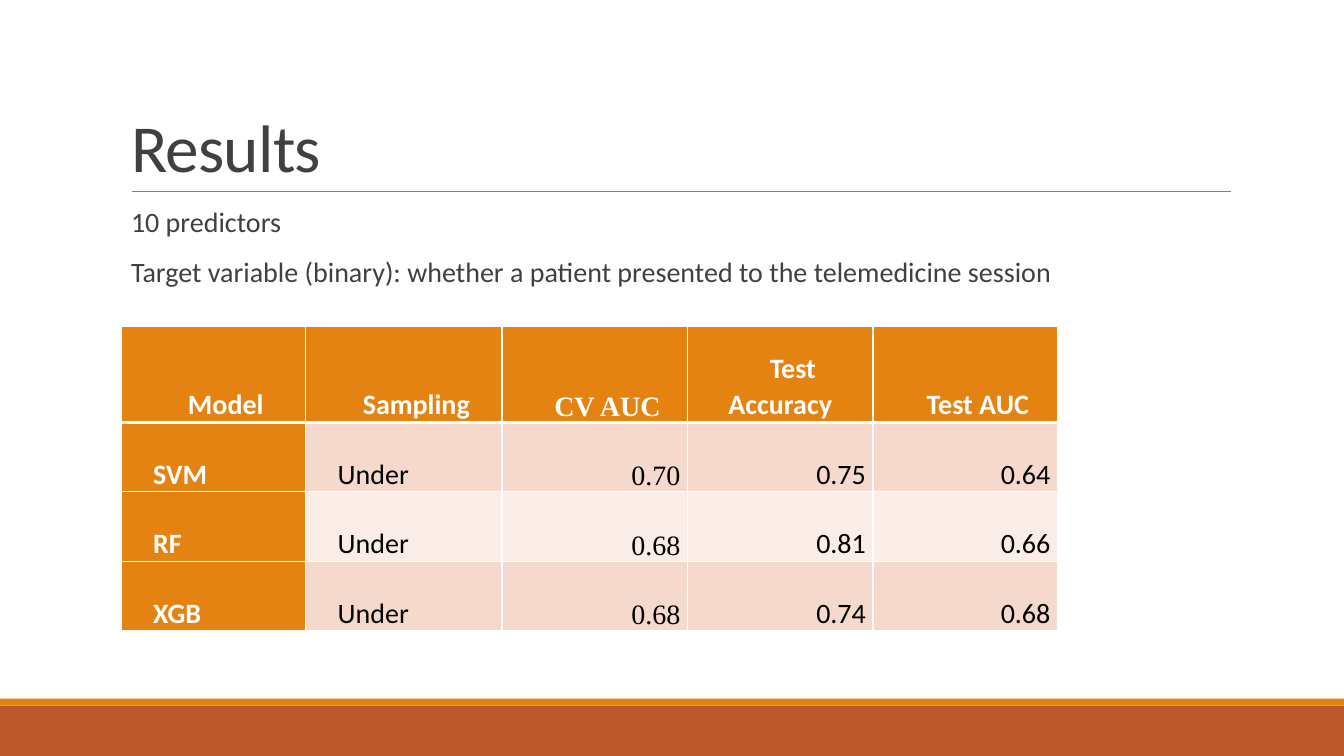
from dataclasses import dataclass

from lxml import etree
from pptx import Presentation
from pptx.dml.color import RGBColor
from pptx.enum.shapes import MSO_CONNECTOR, MSO_SHAPE
from pptx.enum.text import MSO_ANCHOR, MSO_AUTO_SIZE, PP_ALIGN
from pptx.oxml.ns import qn
from pptx.util import Inches, Pt

WIDTH, HEIGHT = Inches(13.33), Inches(7.5)
RECTANGLE, STRAIGHT = MSO_SHAPE.RECTANGLE, MSO_CONNECTOR.STRAIGHT
LEFT, CENTER, RIGHT = PP_ALIGN.LEFT, PP_ALIGN.CENTER, PP_ALIGN.RIGHT
BOTTOM, TOP = MSO_ANCHOR.BOTTOM, MSO_ANCHOR.TOP
NO_AUTOFIT = MSO_AUTO_SIZE.NONE

WHITE = RGBColor(0xFF, 0xFF, 0xFF)
BLACK = RGBColor(0x00, 0x00, 0x00)
INK = RGBColor(0x40, 0x40, 0x40)
RULE_GRAY = RGBColor(0x80, 0x80, 0x80)
ORANGE = RGBColor(0xE4, 0x83, 0x12)
RUST = RGBColor(0xBD, 0x58, 0x2C)
ROW_TINTS = (RGBColor(0xF5, 0xD9, 0xCC), RGBColor(0xFA, 0xED, 0xE7))
SANS, SERIF = "Calibri", "Times New Roman"


@dataclass(frozen=True)
class Area:
    """A rectangle in percent of the slide's width and height."""
    left: float
    top: float
    width: float
    height: float

    def lengths(self) -> tuple[int, int, int, int]:
        return across(self.left), down(self.top), across(self.width), down(self.height)


@dataclass(frozen=True)
class Band:
    area: Area
    color: RGBColor


@dataclass(frozen=True)
class Column:
    heading: str
    width: float
    values: tuple[str, ...]
    align: PP_ALIGN = RIGHT
    font: str = SANS


BANDS = (
    Band(Area(0, 93.33, 100, 6.67), RUST),
    Band(Area(0, 92.4, 100, 0.93), ORANGE),
)
TITLE_AREA = Area(9, 4.13, 82.5, 21.2)
BODY_AREA = Area(9, 26.93, 82.5, 58.67)
RULE_LEFT, RULE_RIGHT, RULE_TOP = 9.83, 91.58, 25.33
TABLE_LEFT, TABLE_TOP = 9, 43.2
HEADER_HEIGHT, ROW_HEIGHT = 12.67, 9.2

BODY_LINES = (
    "10 predictors",
    "Target variable (binary): whether a patient presented to the telemedicine session",
)
COLUMNS = (
    Column("Model", 13.73, ("SVM", "RF", "XGB"), LEFT),
    Column("Sampling", 14.63, ("Under",) * 3, LEFT),
    Column("CV AUC", 13.8, ("0.70", "0.68", "0.68"), font=SERIF),
    Column("Test Accuracy", 13.8, ("0.75", "0.81", "0.74")),
    Column("Test AUC", 13.73, ("0.64", "0.66", "0.68")),
)


def across(percent: float) -> int:
    return round(WIDTH * percent / 100)


def down(percent: float) -> int:
    return round(HEIGHT * percent / 100)


def write(para, text: str, *, size: float = 20, font: str = SANS,
          color: RGBColor = INK, bold: bool = False, align: PP_ALIGN = LEFT,
          line_spacing: float = 0.9, before: float = 0, after: float = 0,
          margin: float = 0, indent: float = 0, tracking: float = 0) -> None:
    para.alignment = align
    para.line_spacing = line_spacing
    para.space_before, para.space_after = Pt(before), Pt(after)
    properties = para._p.get_or_add_pPr()
    properties.set("marL", str(Inches(margin)))
    properties.set("indent", str(Inches(indent)))
    etree.SubElement(properties, qn("a:buNone"))
    span = para.add_run()
    span.text = text
    span.font.name, span.font.size = font, Pt(size)
    span.font.bold, span.font.color.rgb = bold, color
    if tracking:
        span._r.get_or_add_rPr().set("spc", str(round(tracking * 100)))


def place(box, area: Area, anchor: MSO_ANCHOR, side_margin: float):
    box.left, box.top, box.width, box.height = area.lengths()
    frame = box.text_frame
    frame.auto_size, frame.word_wrap = NO_AUTOFIT, True
    frame.vertical_anchor = anchor
    frame.margin_left = frame.margin_right = Inches(side_margin)
    frame.margin_top = frame.margin_bottom = Inches(0.05)
    return frame


def draw_band(page, band: Band) -> None:
    box = page.shapes.add_shape(RECTANGLE, *band.area.lengths())
    box.shadow.inherit = False
    box.fill.solid()
    box.fill.fore_color.rgb = band.color
    box.line.fill.background()


def draw_rule(page) -> None:
    rule = page.shapes.add_connector(
        STRAIGHT, across(RULE_LEFT), down(RULE_TOP), across(RULE_RIGHT), down(RULE_TOP))
    rule.line.color.rgb, rule.line.width = RULE_GRAY, Pt(0.5)
    etree.SubElement(rule._element.spPr, qn("a:effectLst"))


def border_cell(cell, top: float, bottom: float) -> None:
    properties = cell._tc.get_or_add_tcPr()
    for side, width in (("L", 1), ("R", 1), ("T", top), ("B", bottom)):
        line = etree.SubElement(properties, qn(f"a:ln{side}"), w=str(Pt(width)))
        fill = etree.SubElement(line, qn("a:solidFill"))
        etree.SubElement(fill, qn("a:srgbClr"), val=str(WHITE))


def draw_cell(cell, text: str, row: int, *, fill: RGBColor, color: RGBColor,
              bold: bool, align: PP_ALIGN, font: str) -> None:
    # Borders precede the fill in the cell's properties
    border_cell(cell, top=3 if row == 1 else 1, bottom=3 if row == 0 else 1)
    cell.fill.solid()
    cell.fill.fore_color.rgb = fill
    cell.vertical_anchor = BOTTOM
    cell.margin_left = cell.margin_right = Inches(0.07)
    cell.margin_top = cell.margin_bottom = 0
    write(cell.text_frame.paragraphs[0], text, color=color, bold=bold,
          align=align, font=font, line_spacing=1.07, indent=0.25)


def draw_results(page) -> None:
    row_count = 1 + len(COLUMNS[0].values)
    area = Area(TABLE_LEFT, TABLE_TOP, sum(column.width for column in COLUMNS),
                HEADER_HEIGHT + ROW_HEIGHT * (row_count - 1))
    table = page.shapes.add_table(row_count, len(COLUMNS), *area.lengths()).table
    table.horz_banding = False
    for row in range(row_count):
        table.rows[row].height = down(ROW_HEIGHT if row else HEADER_HEIGHT)
    for index, column in enumerate(COLUMNS):
        table.columns[index].width = across(column.width)
        for row, text in enumerate((column.heading, *column.values)):
            is_label = row == 0 or index == 0
            draw_cell(table.cell(row, index), text, row,
                      fill=ORANGE if is_label else ROW_TINTS[(row - 1) % 2],
                      color=WHITE if is_label else BLACK, bold=is_label,
                      align=column.align if row else CENTER, font=column.font)


def main() -> None:
    deck = Presentation()
    deck.slide_width, deck.slide_height = WIDTH, HEIGHT
    page = deck.slides.add_slide(deck.slide_layouts[1])

    # Footer bands and title rule
    for band in BANDS:
        draw_band(page, band)
    draw_rule(page)

    # Title and body text
    title = place(page.shapes.title, TITLE_AREA, BOTTOM, 0.1)
    write(title.paragraphs[0], "Results", size=48, line_spacing=0.85, tracking=-0.5)
    body = place(page.placeholders[1], BODY_AREA, TOP, 0)
    for index, text in enumerate(BODY_LINES):
        para = body.add_paragraph() if index else body.paragraphs[0]
        write(para, text, before=12, after=2, margin=0.1)

    # Model comparison
    draw_results(page)
    deck.save("out.pptx")


if __name__ == "__main__":
    main()
